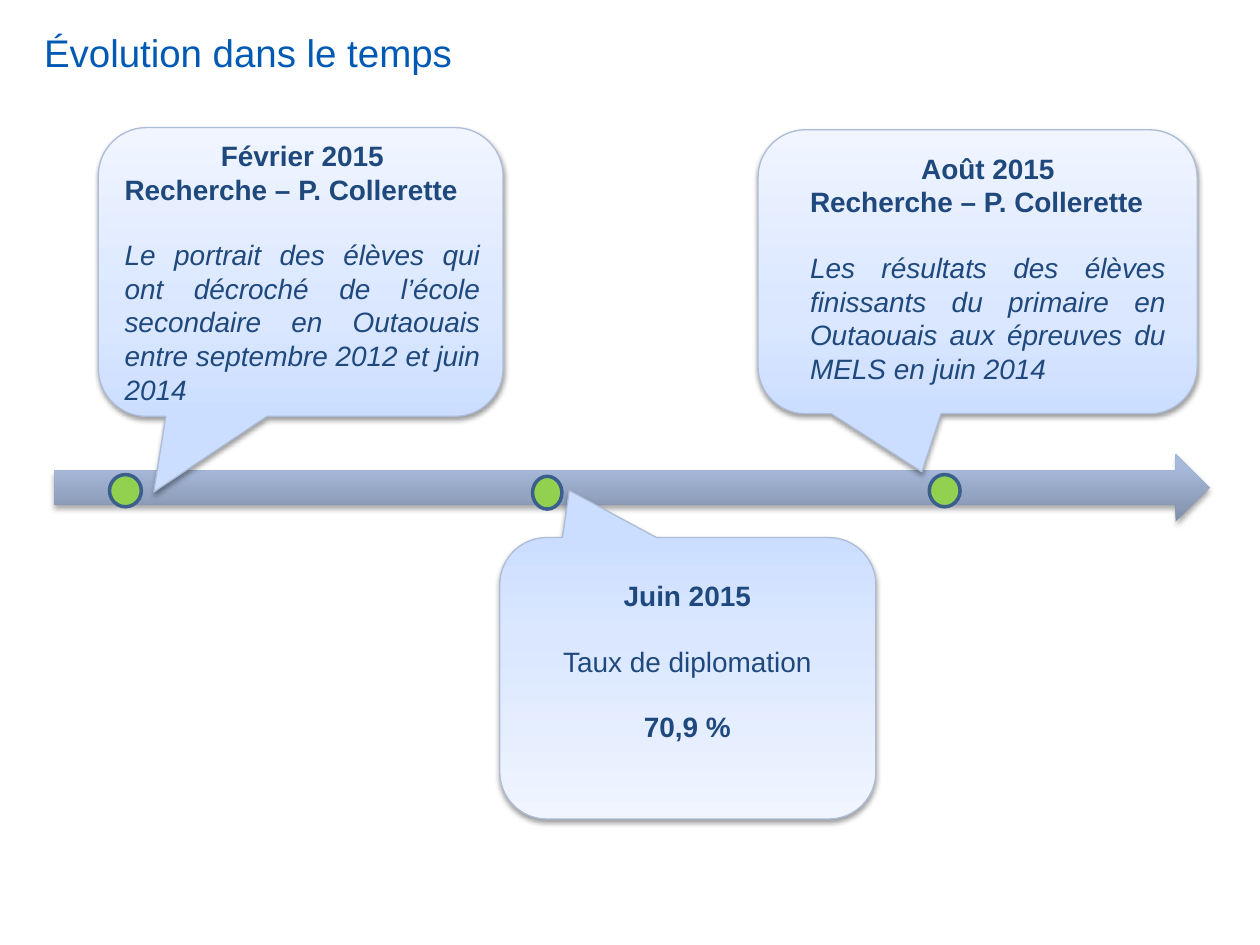
from lxml.etree import SubElement
from pptx import Presentation
from pptx.dml.color import RGBColor
from pptx.enum.shapes import MSO_SHAPE
from pptx.enum.text import MSO_ANCHOR, PP_ALIGN
from pptx.oxml.ns import qn
from pptx.util import Pt

COLORS = {
    "title": "005AB4", "text": "1F497D", "marker": "92D050",
    "marker_line": "3A5F8C", "callout_line": "ADBCD7", "shadow": "000000",
}
ARROW_GRADIENT = [(0, "808FA8"), (80, "A7B9DA"), (100, "A6BADC")]
CALLOUT_GRADIENT = [(0, "CCDEFF"), (35, "DAE7FF"), (100, "F0F5FF")]
BLANK_LINE = 18.4

TITLE = "Évolution dans le temps"
TITLE_BOX = (18, 5.8, 648, 48.2)
TIMELINE = (31, 259.2, 660.2, 38.9)
MARKERS = [
    (62.6, 271.2, 18.2, 18.4),
    (304.3, 272.2, 16.8, 18.7),
    (531, 271.2, 17.6, 18.4),
]

DATE = {"bold": True}
STUDY = {"bold": True, "align": PP_ALIGN.JUSTIFY}
SUMMARY = {"italic": True, "align": PP_ALIGN.JUSTIFY, "before": BLANK_LINE}
RATE_LABEL = {"before": BLANK_LINE}
RATE = {"bold": True, "before": BLANK_LINE}

EVENTS = [
    {
        "callout": (56.2, 72.9, 231.3, 165), "tail": (-0.363, 0.762),
        "text": (64.1, 75.6, 217.4, 162.7),
        "lines": [
            ("Février 2015", DATE),
            ("Recherche – P. Collerette", STUDY),
            ("Le portrait des élèves qui ont décroché de l’école secondaire "
             "en Outaouais entre septembre 2012 et juin 2014", SUMMARY),
        ],
    },
    {
        "callout": (285.6, 307.2, 214.9, 160.8), "tail": (-0.315, 0.667),
        "flipped": True, "text": (306.7, 326.9, 172.1, 121),
        "lines": [
            ("Juin 2015", DATE),
            ("Taux de diplomation", RATE_LABEL),
            ("70,9 %", RATE),
        ],
    },
    {
        "callout": (433.2, 74.2, 250.9, 162.2), "tail": (-0.127, 0.705),
        "text": (455.8, 82.8, 217.4, 143.3),
        "lines": [
            ("Août 2015", DATE),
            ("Recherche – P. Collerette", STUDY),
            ("Les résultats des élèves finissants du primaire en Outaouais "
             "aux épreuves du MELS en juin 2014", SUMMARY),
        ],
    },
]


def rgb(name):
    return RGBColor.from_string(COLORS[name])


def points(box):
    return [Pt(length) for length in box]


def set_format(target, values):
    for attribute, value in values.items():
        setattr(target, attribute, value)


def add_shape(slide, preset, box, line_color=None, line_width=0):
    shape = slide.shapes.add_shape(preset, *points(box))
    shape.shadow.inherit = False
    if line_color:
        shape.line.color.rgb = rgb(line_color)
        shape.line.width = Pt(line_width)
    else:
        shape.line.fill.background()
    return shape


def shade(shape, stops):
    shape.fill.gradient()
    shape.fill.gradient_angle = 90
    stop_list = shape._element.spPr.find(qn("a:gradFill")).find(qn("a:gsLst"))
    for stop in list(stop_list):
        stop_list.remove(stop)
    for position, color in stops:
        stop = SubElement(stop_list, qn("a:gs"), pos=str(position * 1000))
        SubElement(stop, qn("a:srgbClr"), val=color)


def cast_shadow(shape, opacity, distance):
    effects = shape._element.spPr.find(qn("a:effectLst"))
    shadow = SubElement(
        effects, qn("a:outerShdw"), blurRad=str(Pt(3.1)), dist=str(Pt(distance)),
        dir="5400000", rotWithShape="0")
    color = SubElement(shadow, qn("a:srgbClr"), val=COLORS["shadow"])
    SubElement(color, qn("a:alpha"), val=str(opacity * 1000))


def add_callout(slide, event):
    callout = add_shape(slide, MSO_SHAPE.ROUNDED_RECTANGULAR_CALLOUT,
                        event["callout"], "callout_line", 0.75)
    for index, value in enumerate((*event["tail"], 0.167)):
        callout.adjustments[index] = value
    shade(callout, CALLOUT_GRADIENT)
    cast_shadow(callout, 38, 1.6)
    if event.get("flipped"):
        callout._element.spPr.find(qn("a:xfrm")).set("flipV", "1")


def add_event_text(slide, event):
    frame = slide.shapes.add_textbox(*points(event["text"])).text_frame
    frame.word_wrap = True
    for index, (text, style) in enumerate(event["lines"]):
        paragraph = frame.add_paragraph() if index else frame.paragraphs[0]
        paragraph.text = text
        paragraph.alignment = style.get("align", PP_ALIGN.CENTER)
        if "before" in style:
            paragraph.space_before = Pt(style["before"])
        set_format(paragraph.runs[0].font, {
            "name": "Arial", "size": Pt(16), "bold": style.get("bold", False),
            "italic": style.get("italic", False)})
        paragraph.runs[0].font.color.rgb = rgb("text")


def add_title(slide):
    title = slide.shapes.title
    set_format(title, dict(zip(("left", "top", "width", "height"), points(TITLE_BOX))))
    frame = title.text_frame
    frame.text = TITLE
    set_format(frame, {"vertical_anchor": MSO_ANCHOR.MIDDLE, "word_wrap": True})
    heading = frame.paragraphs[0]
    heading.alignment = PP_ALIGN.LEFT
    set_format(heading.runs[0].font, {"name": "Arial", "size": Pt(22), "bold": False})
    heading.runs[0].font.color.rgb = rgb("title")


def main():
    deck = Presentation()
    set_format(deck, {"slide_width": Pt(720), "slide_height": Pt(540)})
    slide = deck.slides.add_slide(deck.slide_layouts[5])
    add_title(slide)

    timeline = add_shape(slide, MSO_SHAPE.RIGHT_ARROW, TIMELINE)
    shade(timeline, ARROW_GRADIENT)
    cast_shadow(timeline, 35, 1.8)

    for box in MARKERS:
        marker = add_shape(slide, MSO_SHAPE.FLOWCHART_CONNECTOR, box, "marker_line", 2)
        marker.fill.solid()
        marker.fill.fore_color.rgb = rgb("marker")

    for event in EVENTS:
        add_callout(slide, event)
    for event in EVENTS:
        add_event_text(slide, event)
    deck.save("out.pptx")


if __name__ == "__main__":
    main()
